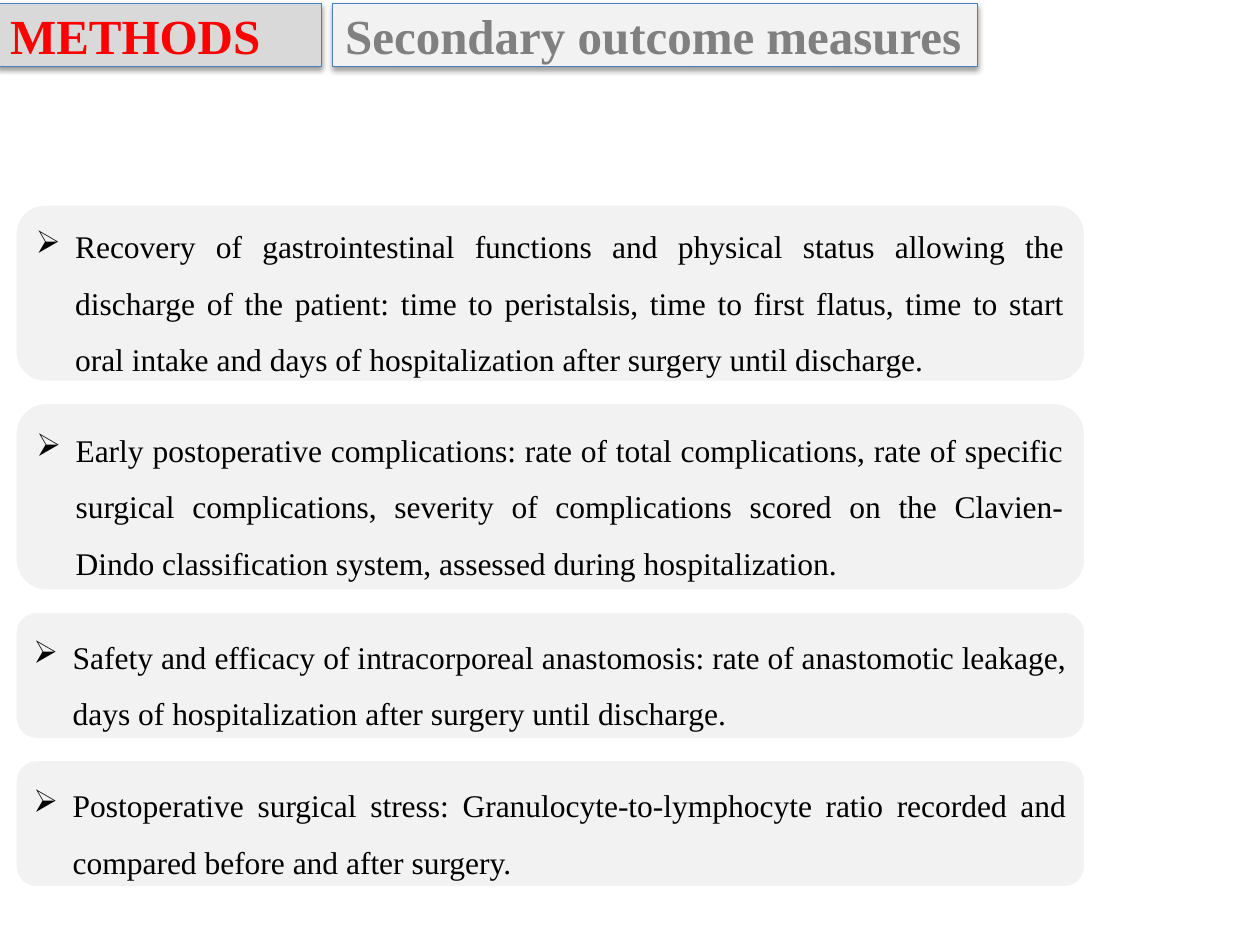
import pptx
import pptx.dml.color
import pptx.enum.shapes
import pptx.enum.text
import pptx.oxml
import pptx.oxml.ns
import pptx.util
from pptx.util import Cm

FONT = "Times New Roman"
ALIGN = pptx.enum.text.PP_ALIGN
SHAPES = pptx.enum.shapes.MSO_SHAPE

OUTCOMES = [  # text, box height in cm
    ("Recovery of gastrointestinal functions and physical status allowing the "
     "discharge of the patient: time to peristalsis, time to first flatus, time to "
     "start oral intake and days of hospitalization after surgery until discharge.", 3.6),
    ("Early postoperative complications: rate of total complications, rate of specific "
     "surgical complications, severity of complications scored on the Clavien-Dindo "
     "classification system, assessed during hospitalization.", 3.81),
    ("Safety and efficacy of intracorporeal anastomosis: rate of anastomotic leakage, "
     "days of hospitalization after surgery until discharge.", 2.59),
    ("Postoperative surgical stress: Granulocyte-to-lymphocyte ratio recorded and "
     "compared before and after surgery.", 2.59),
]


def rgb(value):
    return pptx.dml.color.RGBColor.from_string(value)


def style_box(shape, fill, line, line_width):
    shape.fill.solid()
    shape.fill.fore_color.rgb = rgb(fill)
    shape.line.color.rgb = rgb(line)
    shape.line.width = pptx.util.Pt(line_width)
    shape.shadow.inherit = False


def write_text(shape, text, size, color, align, bold=False, bullet=None):
    frame = shape.text_frame
    frame.word_wrap = True
    frame.auto_size = pptx.enum.text.MSO_AUTO_SIZE.NONE
    frame.vertical_anchor = pptx.enum.text.MSO_ANCHOR.MIDDLE
    frame.text = text
    paragraph = frame.paragraphs[0]
    paragraph.alignment = align
    if bullet:
        paragraph.line_spacing = 1.5
        properties = paragraph._p.get_or_add_pPr()
        indent = Cm(0.79)
        properties.set("marL", str(indent))
        properties.set("indent", str(-indent))
        mark = pptx.oxml.ns.qn("a:buChar")
        properties.append(properties.makeelement(mark, {"char": bullet}))
    paragraph.font.name = FONT
    paragraph.font.size = pptx.util.Pt(size)
    paragraph.font.bold = bold
    paragraph.font.color.rgb = rgb(color)


def add_soft_shadow(shape):
    effects = shape._element.spPr.find(pptx.oxml.ns.qn("a:effectLst"))
    effects.append(pptx.oxml.parse_xml(
        f'<a:outerShdw {pptx.oxml.ns.nsdecls("a")} blurRad="40000" dist="20000" '
        'dir="5400000" rotWithShape="0"><a:srgbClr val="000000">'
        '<a:alpha val="38000"/></a:srgbClr></a:outerShdw>'))


def build_header(slide, left, top, height):
    """Section title and, to its right, the topic of the slide."""
    title_width, gap, topic_width = Cm(6.53), Cm(0.23), Cm(13)
    title = slide.shapes.title
    title.left, title.top, title.width, title.height = left, top, title_width, height
    topic = slide.shapes.add_shape(
        SHAPES.RECTANGLE, left + title_width + gap, top, topic_width, height)
    for shape, text, fill, color, align in (
            (title, "METHODS", "D9D9D9", "FF0000", ALIGN.LEFT),
            (topic, "Secondary outcome measures", "F2F2F2", "808080", ALIGN.JUSTIFY)):
        style_box(shape, fill, "4B7EBC", 0.75)
        add_soft_shadow(shape)
        write_text(shape, text, 28, color, align, bold=True)


def build_outcomes(slide, left, top, width):
    """Stack of rounded boxes, one per outcome, with equal gaps."""
    gap = Cm(0.4)
    for text, height in OUTCOMES:
        box = slide.shapes.add_shape(
            SHAPES.ROUNDED_RECTANGLE, left, top, width, Cm(height))
        style_box(box, "F2F2F2", "FFFFFF", 2)
        write_text(box, text, 18, "000000", ALIGN.JUSTIFY, bullet="➢")
        top += Cm(height) + gap


def main():
    presentation = pptx.Presentation()
    presentation.slide_width, presentation.slide_height = Cm(25.4), Cm(19.05)
    slide = presentation.slides.add_slide(
        presentation.slide_layouts.get_by_name("Title Only"))
    build_header(slide, Cm(-0.05), Cm(0.07), Cm(1.27))
    build_outcomes(slide, Cm(0.3), Cm(4.11), Cm(21.59))
    presentation.save("out.pptx")


if __name__ == "__main__":
    main()
